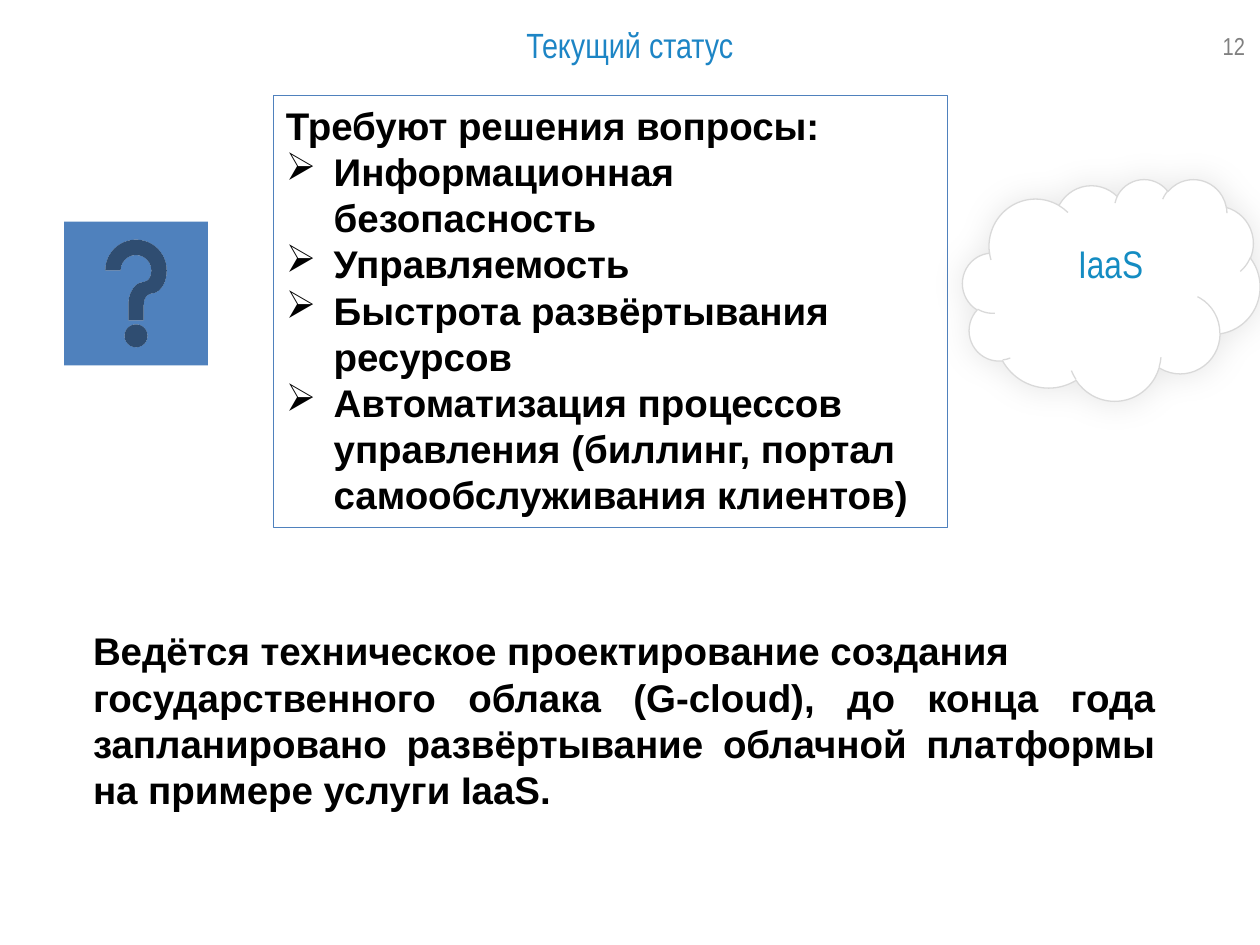
import pptx
import pptx.util
import pptx.dml.color
import pptx.enum.shapes
import pptx.enum.text
import pptx.oxml
import pptx.oxml.ns
from dataclasses import dataclass

Inches, Pt = pptx.util.Inches, pptx.util.Pt
SHAPE = pptx.enum.shapes.MSO_SHAPE
ALIGN = pptx.enum.text.PP_ALIGN
ANCHOR = pptx.enum.text.MSO_ANCHOR


@dataclass(frozen=True)
class Theme:
    body_font: str = "Arial"
    narrow_font: str = "Arial Narrow"
    title_size: int = 20
    body_size: int = 22
    number_size: int = 14
    text: str = "000000"
    title: str = "1D85C5"
    cloud_text: str = "148CC2"
    number: str = "808080"
    accent: str = "4F81BD"
    cloud_fill: str = "FFFFFF"
    cloud_line: str = "D9D9D9"
    line_width: float = 0.75


THEME = Theme()


def rgb(value):
    return pptx.dml.color.RGBColor.from_string(value)


def add_box(s, left, top, width, height):
    return s.shapes.add_textbox(Inches(left), Inches(top), Inches(width), Inches(height))


def add_shape(s, kind, left, top, width, height, fill=None, line=None):
    sp = s.shapes.add_shape(kind, Inches(left), Inches(top), Inches(width), Inches(height))
    sp.shadow.inherit = False
    if fill:
        sp.fill.solid()
        sp.fill.fore_color.rgb = rgb(fill)
    else:
        sp.fill.background()
    if line:
        sp.line.color.rgb = rgb(line)
        sp.line.width = Pt(THEME.line_width)
    else:
        sp.line.fill.background()
    return sp


def add_bullet(p, char, indent):
    p_pr = p._p.get_or_add_pPr()
    p_pr.set("marL", str(Inches(indent)))
    p_pr.set("indent", str(-Inches(indent)))
    bullet = pptx.oxml.ns.qn("a:buChar")
    p_pr.append(p_pr.makeelement(bullet, {"char": char}))


def write(sp, paragraphs, font, size, color, bold=False, anchor=ANCHOR.TOP):
    """Fill a shape with (text, alignment, bullet) paragraphs in one style."""
    tf = sp.text_frame
    tf.word_wrap = True
    tf.vertical_anchor = anchor
    for i, (text, align, bullet) in enumerate(paragraphs):
        p = tf.add_paragraph() if i else tf.paragraphs[0]
        p.alignment = align
        if bullet:
            add_bullet(p, bullet, 0.38)
        r = p.add_run()
        r.text = text
        r.font.name = font
        r.font.size = Pt(size)
        r.font.bold = bold
        r.font.color.rgb = rgb(color)


def add_glow_shadow(sp, blur, opacity):
    """Replace the empty effect list by a soft, centred black shadow."""
    effects = sp._element.spPr.find(pptx.oxml.ns.qn("a:effectLst"))
    effects.append(pptx.oxml.parse_xml(
        f'<a:outerShdw {pptx.oxml.ns.nsdecls("a")} blurRad="{Pt(blur)}" dist="0" dir="0" '
        f'algn="ctr" rotWithShape="0"><a:srgbClr val="000000">'
        f'<a:alpha val="{opacity * 1000}"/></a:srgbClr></a:outerShdw>'))


def header(s, left, top, width, height, title, number):
    write(add_box(s, left + 9.05, top + 0.09, 0.81, 0.4), [(number, ALIGN.RIGHT, None)],
          THEME.narrow_font, THEME.number_size, THEME.number, anchor=ANCHOR.MIDDLE)
    write(add_box(s, left, top, width, height), [(title, ALIGN.CENTER, None)],
          THEME.narrow_font, THEME.title_size, THEME.title, anchor=ANCHOR.MIDDLE)


def questions(s, left, top, width, height, heading, items):
    sp = add_shape(s, SHAPE.RECTANGLE, left, top, width, height, line=THEME.accent)
    write(sp, [(heading, ALIGN.LEFT, None)] + [(item, ALIGN.LEFT, "➢") for item in items],
          THEME.body_font, THEME.body_size, THEME.text, bold=True)


def summary(s, left, top, width, height, opening, rest):
    write(add_box(s, left, top, width, height),
          [(opening, ALIGN.LEFT, None), (rest, ALIGN.JUSTIFY, None)],
          THEME.body_font, THEME.body_size, THEME.text, bold=True)


def cloud(s, left, top, width, height, label):
    sp = add_shape(s, SHAPE.CLOUD, left, top, width, height, THEME.cloud_fill, THEME.cloud_line)
    add_glow_shadow(sp, blur=19, opacity=10)
    write(add_box(s, left + 0.72, top + 0.44, 0.91, 0.47), [(label, ALIGN.CENTER, None)],
          THEME.narrow_font, THEME.body_size, THEME.cloud_text)


def main():
    prs = pptx.Presentation()
    prs.slide_width, prs.slide_height = Inches(10), Inches(7.5)
    s = prs.slides.add_slide(prs.slide_layouts[6])
    header(s, 0.12, 0.07, 9.76, 0.56, "Текущий статус", "12")
    questions(s, 2.17, 0.76, 5.35, 3.43, "Требуют решения вопросы:", [
        "Информационная безопасность",
        "Управляемость",
        "Быстрота развёртывания ресурсов",
        "Автоматизация процессов управления (биллинг, портал самообслуживания клиентов)",
    ])
    add_shape(s, SHAPE.ACTION_BUTTON_HELP, 0.51, 1.76, 1.14, 1.14, THEME.accent)
    summary(s, 0.64, 4.93, 8.63, 1.95,
            "Ведётся техническое проектирование создания",
            "государственного облака (G-cloud), до конца года запланировано "
            "развёртывание облачной платформы на примере услуги IaaS.")
    cloud(s, 7.64, 1.42, 2.36, 1.76, "IaaS")
    prs.save("out.pptx")


if __name__ == "__main__":
    main()
